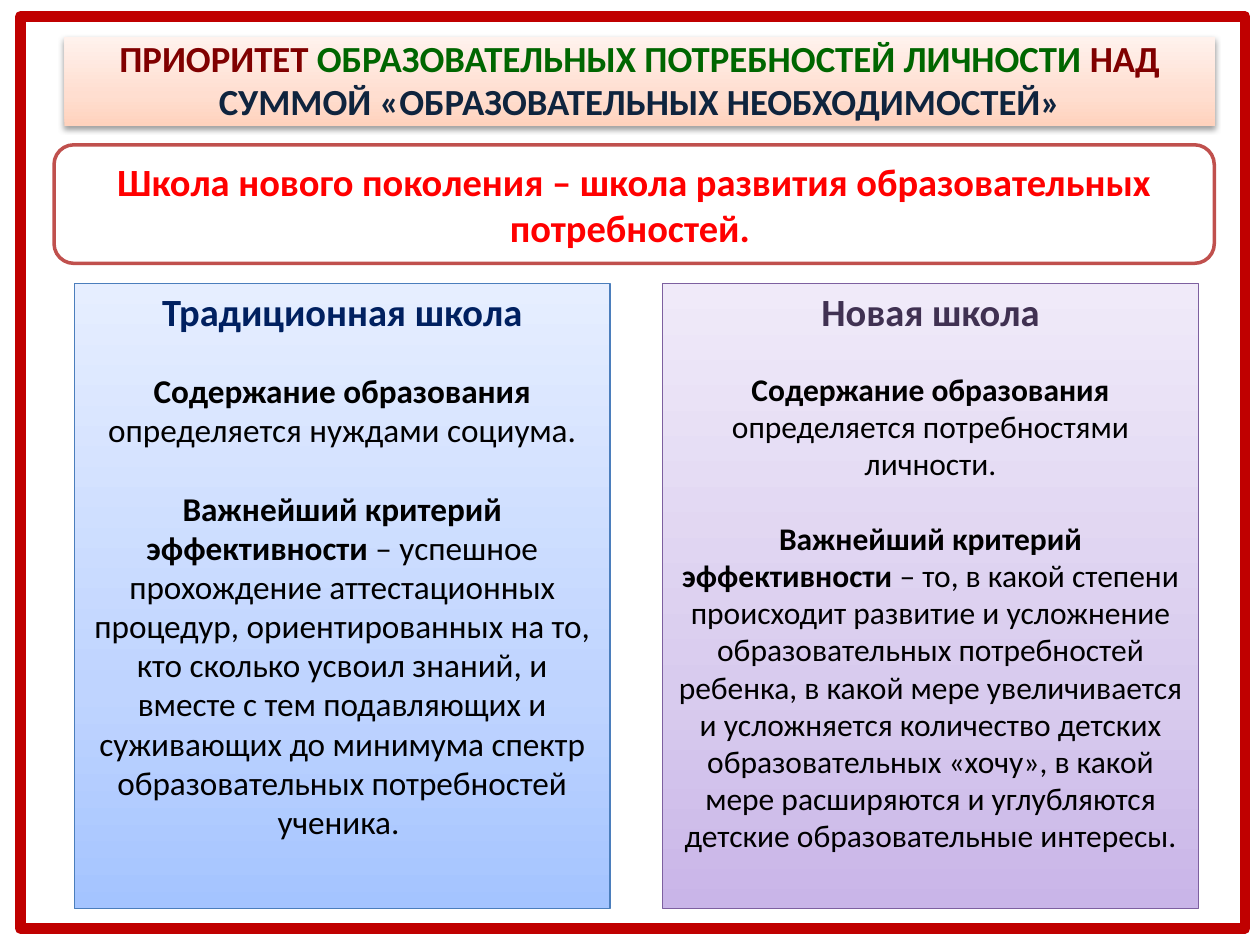
from lxml import etree
from pptx import Presentation
from pptx.dml.color import RGBColor
from pptx.enum.shapes import MSO_SHAPE
from pptx.enum.text import MSO_ANCHOR, MSO_AUTO_SIZE, PP_ALIGN
from pptx.oxml import parse_xml
from pptx.oxml.ns import nsdecls, qn
from pptx.util import Cm, Pt

RECT, ROUND = MSO_SHAPE.RECTANGLE, MSO_SHAPE.ROUNDED_RECTANGLE
TOP, MIDDLE = MSO_ANCHOR.TOP, MSO_ANCHOR.MIDDLE
CENTER, NO_FIT = PP_ALIGN.CENTER, MSO_AUTO_SIZE.NONE
FONT = "Calibri"


def color(code):
    return RGBColor.from_string(code)


def assign(item, **values):
    for name, value in values.items():
        setattr(item, name, value)


def place(shape, box):
    sides = ("left", "top", "width", "height")
    assign(shape, **{side: Cm(size) for side, size in zip(sides, box)})


def outline(shape, code, width):
    shape.line.color.rgb = color(code)
    shape.line.width = Pt(width)


def shade(shape, codes):
    """Fill from the bottom up with three colours."""
    stops = "".join(
        f'<a:gs pos="{spot}"><a:srgbClr val="{code}"/></a:gs>'
        for spot, code in zip((0, 35000, 100000), codes))
    shape._element.spPr.append(parse_xml(
        f'<a:gradFill {nsdecls("a")} rotWithShape="1"><a:gsLst>{stops}</a:gsLst>'
        '<a:lin ang="16200000" scaled="0"/></a:gradFill>'))


def drop_shadow(shape):
    shape._element.spPr.append(parse_xml(
        f'<a:effectLst {nsdecls("a")}>'
        '<a:outerShdw blurRad="40000" dist="20000" dir="5400000" rotWithShape="0">'
        '<a:srgbClr val="000000"><a:alpha val="38000"/></a:srgbClr>'
        '</a:outerShdw></a:effectLst>'))


def set_frame(shape, anchor, inset=0.25):
    assign(shape.text_frame, word_wrap=True, auto_size=NO_FIT,
           vertical_anchor=anchor, margin_left=Cm(inset), margin_right=Cm(inset),
           margin_top=Cm(0.13), margin_bottom=Cm(0.13))


def write(para, runs, size, before=0, spacing=0.98):
    """Fill a centred paragraph with (text, colour, bold) runs."""
    assign(para, alignment=CENTER, space_before=Pt(before), line_spacing=spacing)
    for text, code, bold in runs:
        run = para.add_run()
        run.text = text
        assign(run.font, name=FONT, size=Pt(size), bold=bold)
        run.font.color.rgb = color(code)


def add_border(slide, box):
    shape = slide.shapes.add_shape(RECT, *map(Cm, box))
    shape.shadow.inherit = False
    shape.fill.background()
    outline(shape, "C00000", 6)
    slide.shapes._spTree.insert(2, shape._element)


def fill_title(shape, box):
    place(shape, box)
    shade(shape, ("FFD2BD", "FFDED0", "FFF2ED"))
    drop_shadow(shape)
    set_frame(shape, MIDDLE)
    write(shape.text_frame.paragraphs[0], [
        ("ПРИОРИТЕТ ", "800000", True),
        ("ОБРАЗОВАТЕЛЬНЫХ ПОТРЕБНОСТЕЙ ЛИЧНОСТИ ", "006600", True),
        ("НАД ", "800000", True),
        ("СУММОЙ «ОБРАЗОВАТЕЛЬНЫХ НЕОБХОДИМОСТЕЙ»", "0F243E", True)], 21)


def add_banner(slide, box):
    shape = slide.shapes.add_shape(ROUND, *map(Cm, box))
    shape.shadow.inherit = False
    shape.fill.solid()
    shape.fill.fore_color.rgb = color("FFFFFF")
    outline(shape, "C0504D", 2)
    set_frame(shape, MIDDLE)
    text = "Школа нового поколения – школа развития образовательных потребностей. "
    write(shape.text_frame.paragraphs[0], [(text, "FF0000", True)], 22, spacing=1.0)


def fill_panel(shape, box, shades, edge, head, ink, size, content, measure):
    place(shape, box)
    shade(shape, shades)
    outline(shape, edge, 0.75)
    set_frame(shape, TOP, 0.2)
    frame = shape.text_frame
    write(frame.paragraphs[0], [(head, ink, True)], 22)
    parts = (("Содержание образования ", content, 21),
             ("Важнейший критерий эффективности ", measure, size * 1.2))
    for label, text, gap in parts:
        runs = [(label, "000000", True), (text, "000000", False)]
        write(frame.add_paragraph(), runs, size, gap)
    for para in frame.paragraphs:
        props = para._p.get_or_add_pPr()
        props.set("marL", "0")
        props.set("indent", "0")
        etree.SubElement(props, qn("a:buNone"))


PANELS = (
    dict(shades=("A4C4FF", "BFD4FF", "E6EEFF"), edge="4B7EBC",
         head="Традиционная школа", ink="002060", size=19,
         content="определяется нуждами социума.",
         measure="– успешное прохождение аттестационных процедур, "
                 "ориентированных на то, кто сколько усвоил знаний, и вместе с тем "
                 "подавляющих и суживающих до минимума спектр образовательных "
                 "потребностей ученика. "),
    dict(shades=("C9B5E8", "D8CBEE", "F0EAF9"), edge="7D60A0",
         head="Новая школа", ink="403152", size=18,
         content="определяется потребностями личности.",
         measure="– то, в какой степени происходит развитие и усложнение "
                 "образовательных потребностей ребенка, в какой мере увеличивается "
                 "и усложняется количество детских образовательных «хочу», в какой "
                 "мере расширяются и углубляются детские образовательные интересы."),
)


def main():
    deck = Presentation()
    assign(deck, slide_width=Cm(25.4), slide_height=Cm(19.05))
    slide = deck.slides.add_slide(deck.slide_layouts[3])
    title, *bodies = list(slide.placeholders)[:3]
    add_border(slide, (0.41, 0.33, 24.69, 18.39))
    fill_title(title, (1.3, 0.74, 23.19, 1.8))
    add_banner(slide, (1.09, 2.92, 23.39, 2.39))
    for index, (body, panel) in enumerate(zip(bodies, PANELS)):
        fill_panel(body, (1.5 + index * 11.86, 5.72, 10.8, 12.6), **panel)
    deck.save("out.pptx")


if __name__ == "__main__":
    main()
